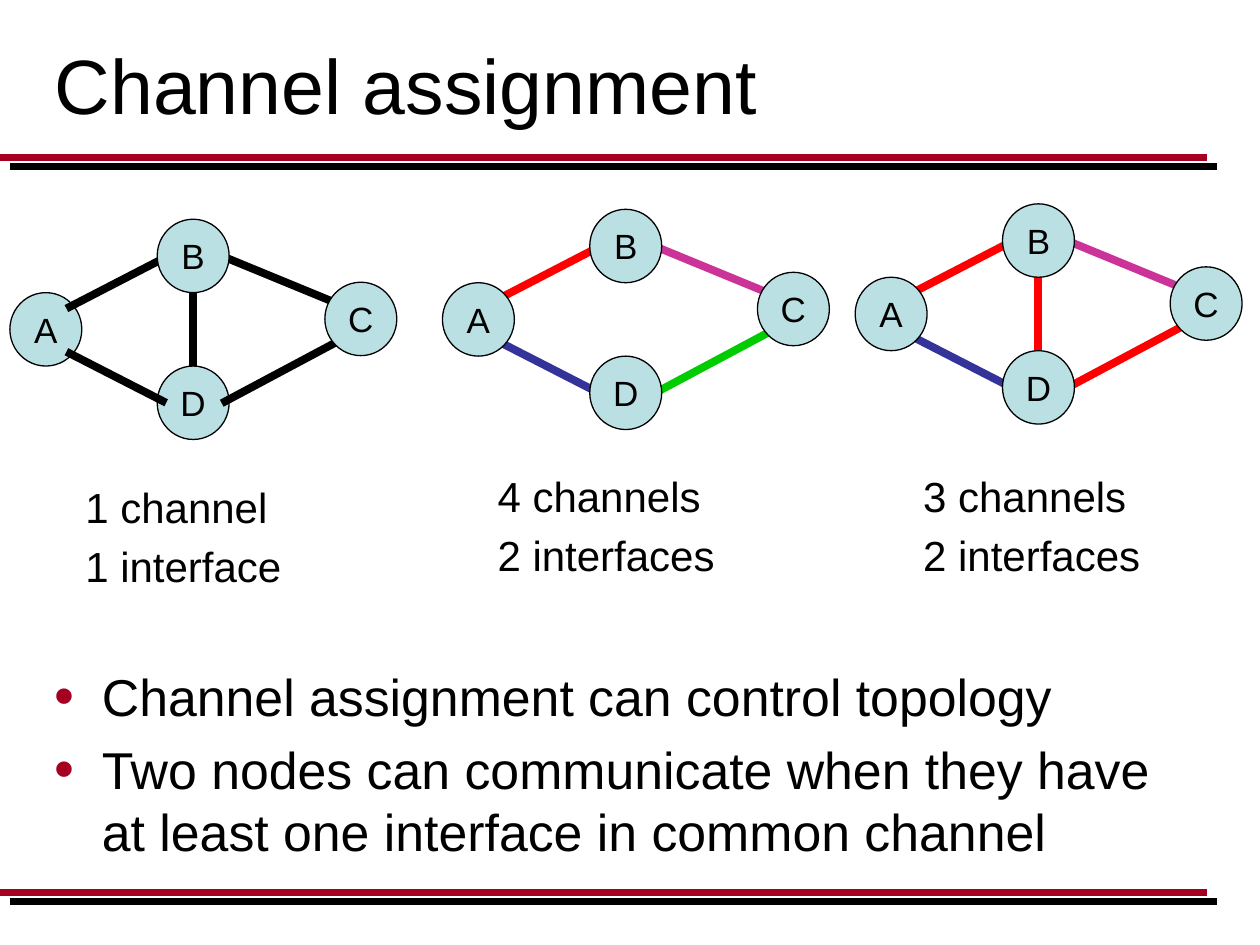
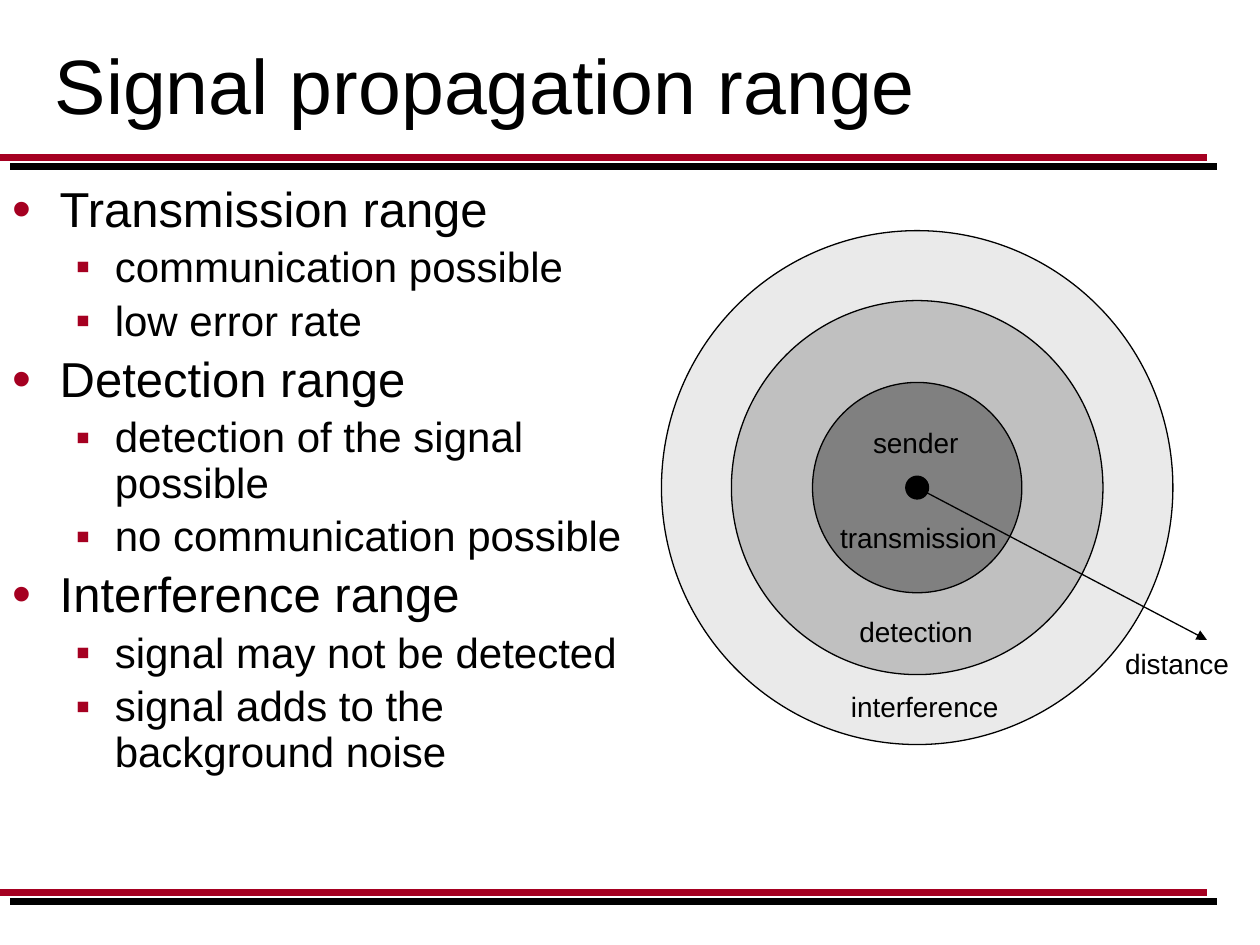
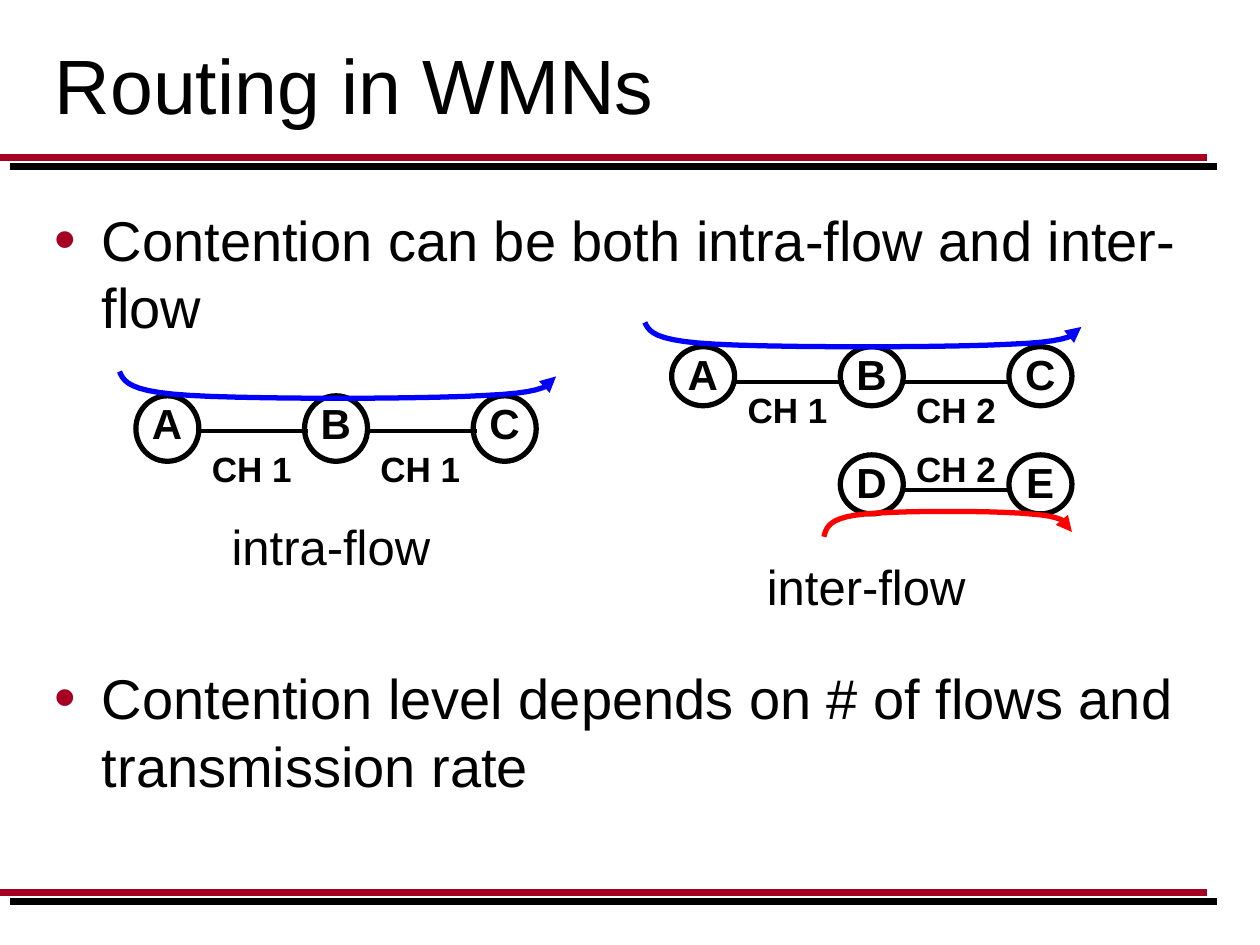
"""Three slides on channel assignment, signal ranges and routing in wireless mesh networks."""
from dataclasses import dataclass

from lxml import etree
from pptx import Presentation
from pptx.dml.color import RGBColor
from pptx.enum.shapes import MSO_CONNECTOR, MSO_SHAPE
from pptx.enum.text import MSO_ANCHOR, MSO_AUTO_SIZE, PP_ALIGN
from pptx.oxml.ns import qn
from pptx.util import Cm, Pt

STRAIGHT = MSO_CONNECTOR.STRAIGHT
OVAL = MSO_SHAPE.OVAL
LEFT, CENTER = PP_ALIGN.LEFT, PP_ALIGN.CENTER
TOP, MIDDLE = MSO_ANCHOR.TOP, MSO_ANCHOR.MIDDLE
NO_AUTOFIT = MSO_AUTO_SIZE.NONE

FONT = "Arial"
BLACK, CRIMSON, BLUE, RED = "000000", "A50021", "0000FF", "FF0000"
NAVY, MAGENTA, GREEN = "333399", "CC3399", "00CC00"
NODE_FILL = "BBE0E3"
BAND_TOPS = (3.18, 17.99)
BAND_LENGTH = 24.33

NODE_WIDTH, NODE_HEIGHT = 1.45, 1.48
NODE_OFFSETS = {"A": (0, 1.48), "B": (2.97, 0), "C": (6.35, 1.27), "D": (2.97, 2.96)}
LINK_ENDS = {
    "AB": (1.14, 1.8, 3.15, 0.76),
    "AD": (1.14, 2.67, 3.15, 3.7),
    "BC": (4.27, 0.74, 6.58, 1.69),
    "CD": (4.27, 3.71, 6.65, 2.44),
    "BD": (3.69, 1.47, 3.69, 2.96),
}
HOP_WIDTH, HOP_PITCH = 1.27, 3.4
FLOW_CURVE = (
    ((0, 0), (0.01, 0.36), (0.02, 0.73), (0.16, 0.86)),
    ((0.16, 0.86), (0.3, 1), (0.7, 1), (0.84, 0.86)),
    ((0.84, 0.86), (0.98, 0.77), (0.99, 0.45), (1, 0.18)),
)
CURVE_STEPS = 10


@dataclass(frozen=True)
class Bullet:
    """One list entry with its level and spacing."""
    text: str
    size: float
    level: int = 0
    line_spacing: float = 1.0
    space_before: float | None = None


@dataclass(frozen=True)
class Topology:
    """A four-node network with coloured links and its caption."""
    left: float
    top: float
    link_colors: dict[str, str]
    caption: str
    caption_left: float
    caption_top: float
    nodes_behind_links: str = ""


@dataclass(frozen=True)
class Ring:
    """One range around the sender."""
    width: float
    height: float
    fill: str


@dataclass(frozen=True)
class Label:
    """A short text in its own box."""
    text: str
    left: float
    top: float
    width: float
    height: float
    align: PP_ALIGN = CENTER


@dataclass(frozen=True)
class Chain:
    """A row of nodes joined by channels."""
    left: float
    top: float
    node_height: float
    nodes: str
    channels: tuple[str, ...]
    channel_drop: float


@dataclass(frozen=True)
class Flow:
    """A curved traffic arrow; a negative depth bends it upwards."""
    left: float
    top: float
    length: float
    depth: float
    color: str


TOPOLOGIES = (
    Topology(0.2, 4.42, dict.fromkeys(LINK_ENDS, BLACK),
             "1 channel\n1 interface", 1.47, 9.58, "AD"),
    Topology(8.92, 4.22, {"AB": RED, "AD": NAVY, "BC": MAGENTA, "CD": GREEN},
             "4 channels\n2 interfaces", 9.78, 9.37),
    Topology(17.24, 4.11, {"AB": RED, "AD": NAVY, "BC": MAGENTA, "CD": RED, "BD": RED},
             "3 channels\n2 interfaces", 18.36, 9.37),
)
RANGES = (
    ("Transmission range", ("communication possible", "low error rate")),
    ("Detection range", ("detection of the signal possible", "no communication possible")),
    ("Interference range", ("signal may not be detected",
                            "signal adds to the background noise")),
)
SENDER = (18.49, 9.83)
RINGS = (
    Ring(10.31, 10.36, "EAEAEA"),
    Ring(7.49, 7.54, "C0C0C0"),
    Ring(4.22, 4.24, "808080"),
    Ring(0.46, 0.46, BLACK),
)
RANGE_LABELS = (
    Label("distance", 22.43, 12.9, 2.97, 1.07, LEFT),
    Label("transmission", 16.51, 10.36, 4.01, 0.84),
    Label("detection", 16.71, 12.27, 3.51, 0.99),
    Label("interference", 16.71, 13.77, 3.86, 0.84),
    Label("sender", 17.35, 8.46, 2.34, 1.07, LEFT),
)
CHAINS = (
    Chain(2.74, 7.98, 1.32, "ABC", ("CH 1", "CH 1"), 0.91),
    Chain(13.54, 6.99, 1.19, "ABC", ("CH 1", "CH 2"), 0.71),
    Chain(16.94, 9.17, 1.19, "DE", ("CH 2",), -0.28),
)
FLOWS = (
    Flow(2.41, 7.49, 8.8, 0.56, BLUE),
    Flow(13.0, 6.5, 8.8, 0.51, BLUE),
    Flow(16.61, 10.82, 5.0, -0.53, RED),
)
FLOW_LABELS = (
    Label("intra-flow", 4.42, 10.29, 4.52, 1.45, LEFT),
    Label("inter-flow", 15.21, 11.1, 4.52, 1.45, LEFT),
)


def rgb(color: str) -> RGBColor:
    """Turn a hex string into a colour."""
    return RGBColor.from_string(color)


def style_paragraph(paragraph, size: float, align=LEFT, bold: bool = False) -> None:
    """Align a paragraph and format its runs."""
    paragraph.alignment = align
    for run in paragraph.runs:
        run.font.name = FONT
        run.font.size = Pt(size)
        run.font.bold = bold
        run.font.color.rgb = rgb(BLACK)


def place(shape, left: float, top: float, width: float, height: float) -> None:
    """Move and size a shape in centimetres."""
    shape.left, shape.top = Cm(left), Cm(top)
    shape.width, shape.height = Cm(width), Cm(height)


def add_line(slide, ends: tuple, color: str, width: float):
    """Draw a straight line without a shadow."""
    line = slide.shapes.add_connector(STRAIGHT, *(Cm(end) for end in ends))
    line.line.color.rgb = rgb(color)
    line.line.width = Pt(width)
    etree.SubElement(line.element.spPr, qn("a:effectLst"))
    return line


def add_arrowhead(shape) -> None:
    """Put a triangle at the far end of a line."""
    etree.SubElement(shape.element.spPr.find(qn("a:ln")), qn("a:tailEnd"), type="triangle")


def add_oval(slide, box: tuple, fill: str | None, line_width: float):
    """Draw an outlined ellipse."""
    oval = slide.shapes.add_shape(OVAL, *(Cm(length) for length in box))
    oval.shadow.inherit = False
    if fill:
        oval.fill.solid()
        oval.fill.fore_color.rgb = rgb(fill)
    else:
        oval.fill.background()
    oval.line.color.rgb = rgb(BLACK)
    oval.line.width = Pt(line_width)
    return oval


def add_label(slide, label: Label, size: float, bold: bool = False, wrap: bool = True) -> None:
    """Write a label, with later lines set a fifth of the size apart."""
    box = slide.shapes.add_textbox(Cm(label.left), Cm(label.top),
                                   Cm(label.width), Cm(label.height))
    frame = box.text_frame
    frame.word_wrap = wrap
    frame.text = label.text
    for index, paragraph in enumerate(frame.paragraphs):
        paragraph.space_before = Pt(0.2 * size if index else 0)
        style_paragraph(paragraph, size, label.align, bold)


def add_bands(slide, master) -> None:
    """Draw the double rules and hand them to the slide master."""
    for color in (BLUE, CRIMSON):
        for top in BAND_TOPS:
            band = add_line(slide, (0, top, BAND_LENGTH, top), color, 4)
            if color == BLUE:
                effects = band.element.spPr.find(qn("a:effectLst"))
                shadow = etree.SubElement(effects, qn("a:outerShdw"), dist=str(Pt(7.8)),
                                          dir="2400000", algn="ctr", rotWithShape="0")
                etree.SubElement(shadow, qn("a:srgbClr"), val=BLACK)
            master.shapes.element.append(band.element)


def add_titled_slide(prs, title: str):
    """Add a slide with its formatted title."""
    slide = prs.slides.add_slide(prs.slide_layouts[1])
    heading = slide.shapes.title
    place(heading, 0.85, 0, 23.28, 3.39)
    frame = heading.text_frame
    frame.text = title
    frame.vertical_anchor = MIDDLE
    frame.auto_size = NO_AUTOFIT
    style_paragraph(frame.paragraphs[0], 44)
    return slide


def add_bullet_mark(paragraph, level: int) -> None:
    """Give a paragraph the indent and crimson mark of its level."""
    indent, hang, mark, percent = ((0.95, 0.95, "•", 110), (2.06, 0.79, "▪", 100))[level]
    properties = paragraph._p.get_or_add_pPr()
    properties.set("marL", str(Cm(indent)))
    properties.set("indent", str(-Cm(hang)))
    color = etree.SubElement(properties, qn("a:buClr"))
    etree.SubElement(color, qn("a:srgbClr"), val=CRIMSON)
    etree.SubElement(properties, qn("a:buSzPct"), val=str(percent * 1000))
    etree.SubElement(properties, qn("a:buFont"), typeface=FONT)
    etree.SubElement(properties, qn("a:buChar"), char=mark)


def fill_body(slide, box: tuple, bullets: list[Bullet]) -> None:
    """Fill the body placeholder with a bulleted list."""
    body = slide.placeholders[1]
    place(body, *box)
    frame = body.text_frame
    frame.text = "\n".join(bullet.text for bullet in bullets)
    frame.vertical_anchor = TOP
    frame.auto_size = NO_AUTOFIT
    for index, (paragraph, bullet) in enumerate(zip(frame.paragraphs, bullets)):
        paragraph.level = bullet.level
        add_bullet_mark(paragraph, bullet.level)
        gap = 0.2 * bullet.size if bullet.space_before is None else bullet.space_before
        paragraph.space_before = Pt(gap if index else 0)
        paragraph.line_spacing = bullet.line_spacing
        style_paragraph(paragraph, bullet.size)


def add_network_node(slide, topology: Topology, name: str) -> None:
    """Draw one lettered node of a topology."""
    dx, dy = NODE_OFFSETS[name]
    box = (topology.left + dx, topology.top + dy, NODE_WIDTH, NODE_HEIGHT)
    frame = add_oval(slide, box, NODE_FILL, 0.75).text_frame
    frame.text = name
    frame.word_wrap = False
    frame.vertical_anchor = MIDDLE
    style_paragraph(frame.paragraphs[0], 20, CENTER)


def add_topology(slide, topology: Topology) -> None:
    """Draw a network with its links and caption."""
    for name in topology.nodes_behind_links:
        add_network_node(slide, topology, name)
    for link, color in topology.link_colors.items():
        x1, y1, x2, y2 = LINK_ENDS[link]
        ends = (topology.left + x1, topology.top + y1, topology.left + x2, topology.top + y2)
        add_line(slide, ends, color, 4.5)
    for name in NODE_OFFSETS:
        if name not in topology.nodes_behind_links:
            add_network_node(slide, topology, name)
    caption = Label(topology.caption, topology.caption_left, topology.caption_top,
                    6.55, 2.51, LEFT)
    add_label(slide, caption, 24)


def add_chain(slide, chain: Chain) -> None:
    """Draw a row of nodes with the channels between them."""
    for index, name in enumerate(chain.nodes):
        left = chain.left + index * HOP_PITCH
        add_oval(slide, (left, chain.top, HOP_WIDTH, chain.node_height), None, 3)
        letter = Label(name, left + 0.07, chain.top - 0.09, 1.12, 1.27)
        add_label(slide, letter, 24, bold=True, wrap=False)
    for index, channel in enumerate(chain.channels):
        left = chain.left + index * HOP_PITCH + HOP_WIDTH
        wire = chain.top + 0.71
        add_line(slide, (left, wire, left + 2.2, wire), BLACK, 2.25)
        tag = Label(channel, left, chain.top + chain.channel_drop, 2.13, 1.09)
        add_label(slide, tag, 20, bold=True, wrap=False)


def curve_point(controls: tuple, t: float) -> tuple[float, float]:
    """Return the point at t on a cubic curve."""
    weights = ((1 - t) ** 3, 3 * t * (1 - t) ** 2, 3 * t ** 2 * (1 - t), t ** 3)
    x, y = (sum(w * c[axis] for w, c in zip(weights, controls)) for axis in (0, 1))
    return x, y


def add_flow(slide, flow: Flow) -> None:
    """Draw a curved arrow along a chain."""
    fractions = [curve_point(controls, step / CURVE_STEPS)
                 for controls in FLOW_CURVE for step in range(1, CURVE_STEPS + 1)]
    points = [(Cm(flow.left + x * flow.length), Cm(flow.top + y * flow.depth))
              for x, y in fractions]
    builder = slide.shapes.build_freeform(Cm(flow.left), Cm(flow.top))
    builder.add_line_segments(points, close=False)
    arrow = builder.convert_to_shape()
    arrow.shadow.inherit = False
    arrow.fill.background()
    arrow.line.color.rgb = rgb(flow.color)
    arrow.line.width = Pt(3)
    add_arrowhead(arrow)


def build_assignment(prs) -> None:
    """Build the channel assignment slide and the shared bands."""
    slide = add_titled_slide(prs, "Channel assignment")
    add_bands(slide, prs.slide_master)
    fill_body(slide, (0.85, 13.28, 23.28, 4.5), [
        Bullet("Channel assignment can control topology", 29.6),
        Bullet("Two nodes can communicate when they have at least one interface "
               "in common channel", 29.6),
    ])
    for topology in TOPOLOGIES:
        add_topology(slide, topology)


def build_ranges(prs) -> None:
    """Build the signal propagation slide."""
    slide = add_titled_slide(prs, "Signal propagation range")
    bullets = []
    for name, traits in RANGES:
        bullets.append(Bullet(name, 28, line_spacing=0.9))
        bullets.extend(Bullet(trait, 24, 1, 0.9) for trait in traits)
    fill_body(slide, (0, 3.6, 13.55, 13.4), bullets)
    x, y = SENDER
    for ring in RINGS:
        box = (x - ring.width / 2, y - ring.height / 2, ring.width, ring.height)
        add_oval(slide, box, ring.fill, 0.75)
    add_arrowhead(add_line(slide, (x, y, 24.33, 12.9), BLACK, 0.75))
    for label in RANGE_LABELS:
        add_label(slide, label, 16)


def build_routing(prs) -> None:
    """Build the routing slide."""
    slide = add_titled_slide(prs, "Routing in WMNs")
    fill_body(slide, (0.85, 4.02, 23.28, 14.18), [
        Bullet("Contention can be both intra-flow and inter-flow", 32),
        Bullet("Contention level depends on # of flows and transmission rate", 32,
               space_before=185),
    ])
    for chain in CHAINS:
        add_chain(slide, chain)
    for flow in FLOWS:
        add_flow(slide, flow)
    for label in FLOW_LABELS:
        add_label(slide, label, 28)


def main() -> None:
    """Build and save the presentation."""
    prs = Presentation()
    prs.slide_width, prs.slide_height = Cm(25.4), Cm(19.05)
    build_assignment(prs)
    build_ranges(prs)
    build_routing(prs)
    prs.save("out.pptx")


if __name__ == "__main__":
    main()
